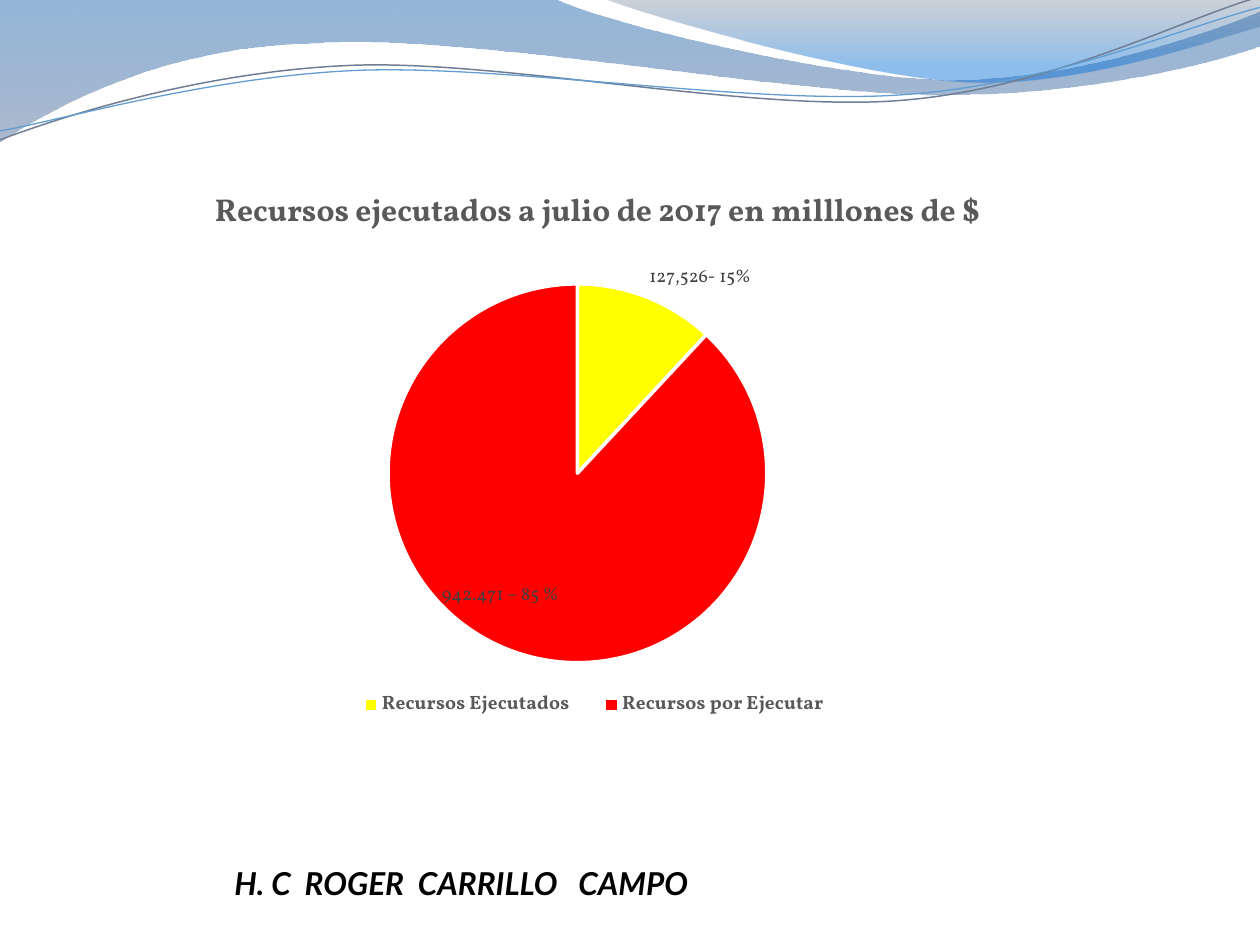
from lxml import etree
from pptx import Presentation
from pptx import util as u
from pptx.chart import data
from pptx.dml import color
from pptx.enum import chart as ce, text
from pptx.oxml import ns, parse_xml

# Two numbers are a point, six are a cubic curve.
WAVE = [(0, 0), (11.18, -0.03),
        (12.09, 0.43, 16.87, 1.6, 19.25, 1.6),
        (21.67, 1.6, 24.33, 0.66, 25.4, 0.23), (25.43, 0.91),
        (24.97, 1.12, 22.1, 1.93, 18.95, 1.91),
        (15.8, 1.91, 9.7, 0.71, 6.53, 0.86),
        (3.28, 0.91, 1.17, 2.11, -0.03, 2.87), (0, 0)]
CREST = [(12.17, -0.03),
         (12.93, 0.28, 17.32, 1.57, 19.53, 1.65),
         (21.74, 1.75, 24.41, 0.81, 25.4, 0.53), (25.4, 0), (12.17, -0.03)]
GREY = [(0, 2.82),
        (1.22, 2.36, 4.01, 1.45, 7.04, 1.32),
        (10.03, 1.19, 15.06, 2.26, 18.11, 2.03),
        (21.16, 1.8, 23.83, 0.38, 25.35, -0.05)]
BLUE = [(0, 2.64),
        (1.19, 2.44, 4.17, 1.55, 7.19, 1.42),
        (10.24, 1.3, 15.16, 2.13, 18.21, 1.91),
        (21.23, 1.7, 23.9, 0.53, 25.4, 0.15)]


def rgb(code):
    return color.RGBColor.from_string(code)


def bend(shape, path):
    """Turn the straight parts of a freeform into the curves of its path."""
    lines = list(shape.element.iter(ns.qn("a:lnTo")))
    for line, seg in zip(lines, path[1:]):
        if len(seg) == 2:
            continue
        cubic = etree.Element(ns.qn("a:cubicBezTo"))
        for x, y in zip(seg[::2], seg[1::2]):
            point = etree.SubElement(cubic, ns.qn("a:pt"))
            point.set("x", str(u.Cm(x) - shape.left))
            point.set("y", str(u.Cm(y) - shape.top))
        line.getparent().replace(line, cubic)


def place(node, index, edge=True, inner=False, **sizes):
    """Give a chart part a manual layout."""
    for old in node.findall(ns.qn("c:layout")):
        node.remove(old)
    layout = etree.Element(ns.qn("c:layout"))
    manual = etree.SubElement(layout, ns.qn("c:manualLayout"))
    tags = {"layoutTarget": "inner"} if inner else {}
    if edge:
        tags.update(xMode="edge", yMode="edge")
    for tag, val in {**tags, **sizes}.items():
        etree.SubElement(manual, ns.qn("c:" + tag)).set("val", str(val))
    node.insert(index, layout)


class Deck:
    serif, sans = "Vollkorn", "Lato"
    grey, dark = "595959", "404040"

    def __init__(self):
        self.prs = Presentation()
        self.prs.slide_width, self.prs.slide_height = u.Cm(25.4), u.Cm(19.05)
        self.slide = self.prs.slides.add_slide(self.prs.slide_layouts[6])

    def font(self, font, name, size, code, bold=False, italic=False):
        font.name, font.size = name, u.Pt(size)
        font.bold, font.italic = bold, italic
        font.color.rgb = rgb(code)

    def free(self, path, close):
        ends = [(u.Cm(seg[-2]), u.Cm(seg[-1])) for seg in path]
        pen = self.slide.shapes.build_freeform(*ends[0], scale=1.0)
        pen.add_line_segments(ends[1:], close=close)
        shape = pen.convert_to_shape()
        bend(shape, path)
        shape.shadow.inherit = False
        shape.fill.background()
        return shape

    def band(self, path, stops):
        """Draw a closed area; each stop is position, colour, opacity in percent."""
        shape = self.free(path, True)
        shape.line.fill.background()
        marks = "".join(
            f'<a:gs pos="{pos * 1000}"><a:srgbClr val="{code}">'
            f'<a:alpha val="{alpha * 1000}"/></a:srgbClr></a:gs>'
            for pos, code, alpha in stops)
        props = shape.element.spPr
        props.replace(props.find(ns.qn("a:noFill")), parse_xml(
            f'<a:gradFill {ns.nsdecls("a")} rotWithShape="1"><a:gsLst>{marks}</a:gsLst>'
            '<a:lin ang="5400000" scaled="0"/></a:gradFill>'))

    def curve(self, path, code, width):
        line = self.free(path, False).line
        line.color.rgb, line.width = rgb(code), u.Pt(width)

    def label(self, words, x, y, w, h, size):
        box = self.slide.shapes.add_textbox(u.Cm(x), u.Cm(y), u.Cm(w), u.Cm(h))
        frame = box.text_frame
        frame.word_wrap = True
        frame.auto_size = text.MSO_AUTO_SIZE.SHAPE_TO_FIT_TEXT
        para = frame.paragraphs[0]
        para.alignment = text.PP_ALIGN.CENTER
        run = para.add_run()
        run.text = words
        self.font(run.font, self.sans, size, "000000", True, True)

    def pie(self, title, slices, x, y, w, h):
        """Draw a pie; each slice is name, value, colour, label, label place, shift."""
        source = data.CategoryChartData(number_format="#,##0")
        source.categories = [s[0] for s in slices]
        source.add_series("Series 1", [s[1] for s in slices])
        chart = self.slide.shapes.add_chart(
            ce.XL_CHART_TYPE.PIE, u.Cm(x), u.Cm(y), u.Cm(w), u.Cm(h), source).chart
        self.font(chart.font, self.serif, 10, "000000")

        chart.has_title = True
        run = chart.chart_title.text_frame.paragraphs[0].add_run()
        run.text = title
        self.font(run.font, self.serif, 18, self.grey, True)
        place(chart.chart_title._element, 1, x=0.16, y=0.03)

        chart.has_legend = True
        chart.legend.position = ce.XL_LEGEND_POSITION.BOTTOM
        chart.legend.include_in_layout = False
        self.font(chart.legend.font, self.serif, 11, self.grey, True)
        place(chart.legend._element, 1, x=0.27, y=0.93, w=0.45, h=0.05)

        plot = chart.plots[0]
        plot.vary_by_categories = True
        place(plot._element.getparent(), 0, inner=True, x=0.31, y=0.21, w=0.34, h=0.67)
        series = plot.series[0]
        tags = series.data_labels
        tags.show_value, tags.number_format = True, "#,##0"
        tags.number_format_is_linked = False
        self.font(tags.font, self.serif, 10.5, self.dark, True)
        for i, (_, _, code, words, spot, shift) in enumerate(slices):
            point = series.points[i]
            point.format.fill.solid()
            point.format.fill.fore_color.rgb = rgb(code)
            point.format.line.color.rgb = rgb("FFFFFF")
            point.format.line.width = u.Pt(2)
            tag = point.data_label
            run = tag.text_frame.paragraphs[0].add_run()
            run.text = words
            self.font(run.font, self.serif, 10.5, self.dark)
            tag.position = spot
            if shift:
                node = run._r.xpath("ancestor::c:dLbl")[0]
                place(node, 1, edge=False, x=shift[0], y=shift[1])


def main():
    deck = Deck()
    deck.band(WAVE, [(0, "125EAA", 45), (100, "697FA4", 55)])
    deck.band(CREST, [(0, "596982", 30), (80, "0670DA", 45)])
    deck.curve(GREY, "707E95", 0.85)
    deck.curve(BLUE, "629DD1", 0.75)
    deck.label("H. C  ROGER  CARRILLO   CAMPO", 3.71, 17.3, 11.18, 1.04, 18)
    spot = ce.XL_LABEL_POSITION
    deck.pie("Recursos ejecutados a julio de 2017 en milllones de $", [
        ("Recursos Ejecutados", 127526, "FFFF00", "127,526- 15%",
         spot.OUTSIDE_END, None),
        ("Recursos por Ejecutar", 942474, "FF0000", "942.471 – 85 %",
         spot.INSIDE_END, (-0.06, -0.06)),
    ], 0.51, 3.33, 23.19, 11.4)
    deck.prs.save("out.pptx")


if __name__ == "__main__":
    main()
